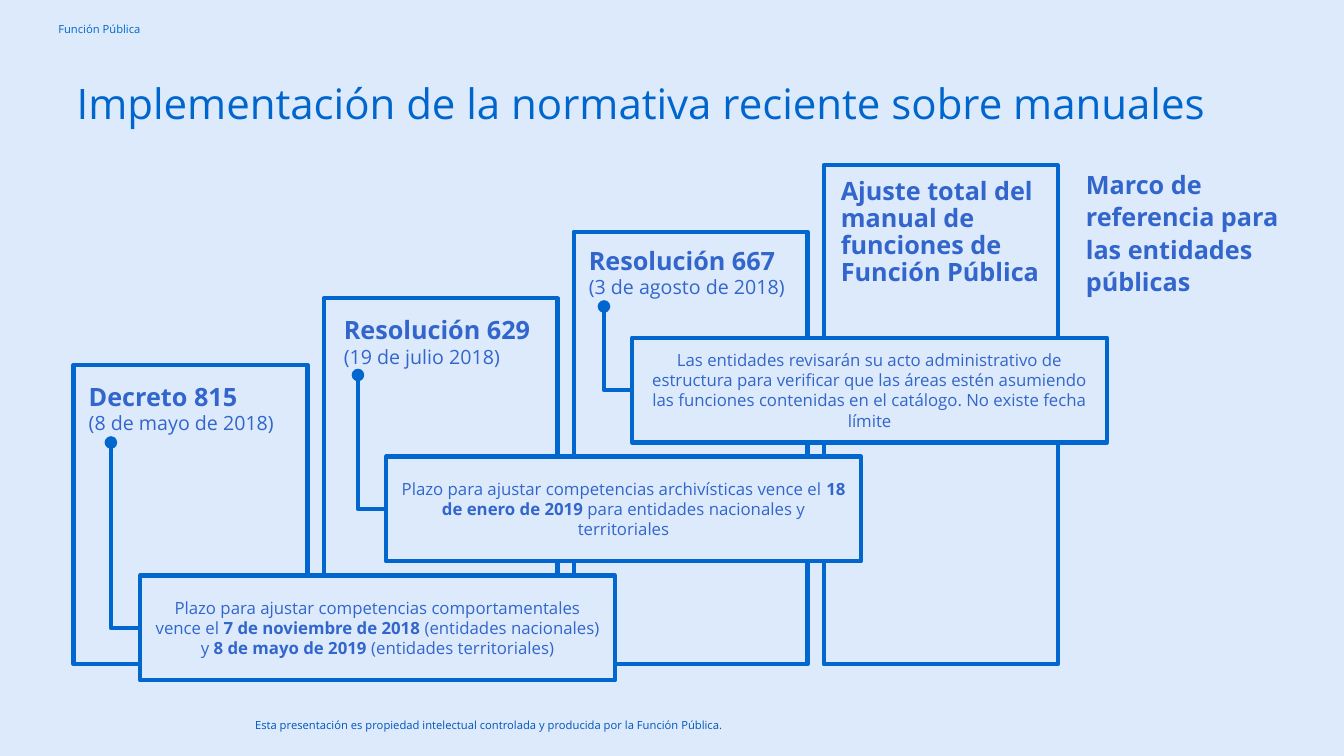
from lxml import etree
from pptx import Presentation
from pptx import util as u
from pptx.dml.color import RGBColor
from pptx.enum import shapes, text
from pptx.oxml import ns

COLORS = {"page": "DCEAFB", "line": "0166CD", "title": "0066CD",
          "body": "3266CC", "footer": "0054BC"}
FONT = "Open Sans"
STEP_WIDTH, NOTE_WIDTH, NOTE_HEIGHT = 2.32, 4.71, 1.04

# Each heading: its offset from the step, its width and height, left inset, line spacing, paragraphs
# Each run is (text, size, bold)
STEPS = [
    (2.97, (0, 0.1, 2.32, 0.67), 0.15, 1,
     [[("Decreto 815", 18, True)], [("(8 de mayo de 2018)", 14, False)]]),
    (3.41, (0.05, 0.1, 2.26, 0.67), 0.15, 1,
     [[("Resolución 629 ", 18, True), ("(19 de julio 2018)", 14, False)]]),
    (4.29, (0.02, 0.07, 2.38, 0.67), 0.13, 1,
     [[("Resolución 667", 18, True)], [("(3 de agosto de 2018)", 14, False)]]),
    (4.95, (0.02, 0.07, 2.27, 1.22), 0.15, 0.9,
     [[("Ajuste total del manual de funciones de Función Pública", 18, True)]]),
]

# Each note: the point its connector reaches, and its runs
NOTES = [
    ((1.1, 4.39), [
        ("Plazo para ajustar competencias comportamentales vence el ", 12, False),
        ("7 de noviembre de 2018 ", 12, True),
        ("(entidades nacionales) y ", 12, False),
        ("8 de mayo de 2019", 12, True),
        (" (entidades territoriales)", 12, False)]),
    ((3.55, 3.72), [
        ("Plazo para ajustar competencias archivísticas vence el ", 12, False),
        ("18 de enero de 2019", 12, True),
        (" para entidades nacionales y territoriales", 12, False)]),
    ((5.99, 3.04), [
        ("Las entidades revisarán su acto administrativo de estructura para verificar "
         "que las áreas estén asumiendo las funciones contenidas en el catálogo. "
         "No existe fecha límite", 12, False)]),
]


def color(name):
    return RGBColor.from_string(COLORS[name])


def inches(values):
    return [u.Inches(value) for value in values]


def write(frame, paragraphs, tone="body", insets=(0.1, 0.05), spacing=1,
          align=text.PP_ALIGN.LEFT, anchor=text.MSO_ANCHOR.TOP):
    """Fill a text frame with paragraphs of (text, size, bold) runs."""
    frame.word_wrap = True
    frame.auto_size = text.MSO_AUTO_SIZE.NONE
    frame.vertical_anchor = anchor
    frame.margin_left = frame.margin_right = u.Inches(insets[0])
    frame.margin_top = frame.margin_bottom = u.Inches(insets[1])
    for index, runs in enumerate(paragraphs):
        para = frame.add_paragraph() if index else frame.paragraphs[0]
        para.alignment, para.line_spacing = align, spacing
        para.font.name = FONT
        para.font.color.rgb = color(tone)
        para.font.size = u.Pt(runs[0][1])
        para.font.bold = runs[0][2]
        for words, size, bold in runs:
            span = para.add_run()
            span.text = words
            if (size, bold) != runs[0][1:]:
                span.font.size, span.font.bold = u.Pt(size), bold


def add_text(page, box, paragraphs, **style):
    label = page.shapes.add_textbox(*inches(box))
    write(label.text_frame, paragraphs, **style)


def add_frame(page, box, filled):
    frame = page.shapes.add_shape(shapes.MSO_SHAPE.RECTANGLE, *inches(box))
    frame.shadow.inherit = False
    if filled:
        frame.fill.solid()
        frame.fill.fore_color.rgb = color("page")
    else:
        frame.fill.background()
    frame.line.color.rgb = color("line")
    frame.line.width = u.Pt(3)
    return frame


def add_elbow(page, note, target):
    """Run left from the note's side, then up to a dot at the target."""
    elbow = page.shapes.add_connector(
        shapes.MSO_CONNECTOR.ELBOW, note.left, note.top + note.height // 2, *inches(target))
    elbow.begin_connect(note, 1)
    elbow.line.color.rgb = color("line")
    elbow.line.width = u.Pt(3)
    properties = elbow._element.spPr
    properties.find(ns.qn("a:prstGeom")).set("prst", "bentConnector2")
    # A half turn stands for both flips
    frame = properties.find(ns.qn("a:xfrm"))
    frame.attrib.clear()
    frame.set("rot", "10800000")
    etree.SubElement(properties.find(ns.qn("a:ln")), ns.qn("a:tailEnd"), type="oval")
    etree.SubElement(properties, ns.qn("a:effectLst"))


def add_title(page, box):
    title = page.shapes.title
    title.left, title.top, title.width, title.height = inches(box)
    write(title.text_frame,
          [[("Implementación de la normativa reciente sobre manuales", 30, False)]],
          tone="title", spacing=0.9)


def add_page_marks(page):
    add_text(page, (0.48, 0.16, 2.7, 0.26), [[("Función Pública", 8, False)]],
             tone="title", anchor=text.MSO_ANCHOR.MIDDLE)
    add_text(page, (2.4, 7, 6.67, 0.5),
             [[("Esta presentación es propiedad intelectual controlada y producida "
                "por la Función Pública.", 8, False)]],
             tone="footer", insets=(0.13, 0.13))


def add_staircase(page, left, bottom_top):
    """Four steps rising to the right from the first step's top left corner."""
    for index, (height, heading, inset, spacing, paragraphs) in enumerate(STEPS):
        x, y = left + 2.48 * index, bottom_top - 0.66 * index
        add_frame(page, (x, y, STEP_WIDTH, height), filled=False)
        dx, dy, width, tall = heading
        add_text(page, (x + dx, y + dy, width, tall), paragraphs,
                 insets=(inset, 0.06), spacing=spacing)


def add_notes(page, left, top):
    """Deadline notes over the steps, each tied to its heading."""
    for index, (target, runs) in enumerate(NOTES):
        box = (left + 2.44 * index, top - 1.18 * index, NOTE_WIDTH, NOTE_HEIGHT)
        note = add_frame(page, box, filled=True)
        write(note.text_frame, [runs], align=text.PP_ALIGN.CENTER,
              anchor=text.MSO_ANCHOR.MIDDLE)
        add_elbow(page, note, target)


def main():
    deck = Presentation()
    deck.slide_width, deck.slide_height = inches((13.33, 7.5))
    page = deck.slides.add_slide(deck.slide_layouts[5])
    page.background.fill.solid()
    page.background.fill.fore_color.rgb = color("page")

    add_page_marks(page)
    add_title(page, (0.66, 0.78, 11.59, 0.87))
    add_staircase(page, 0.73, 3.62)
    add_notes(page, 1.39, 5.71)
    add_text(page, (10.64, 1.6, 2.34, 1.41),
             [[("Marco de referencia para las entidades públicas", 18, True)]],
             insets=(0.13, 0.06), spacing=1.07)
    deck.save("out.pptx")


if __name__ == "__main__":
    main()
